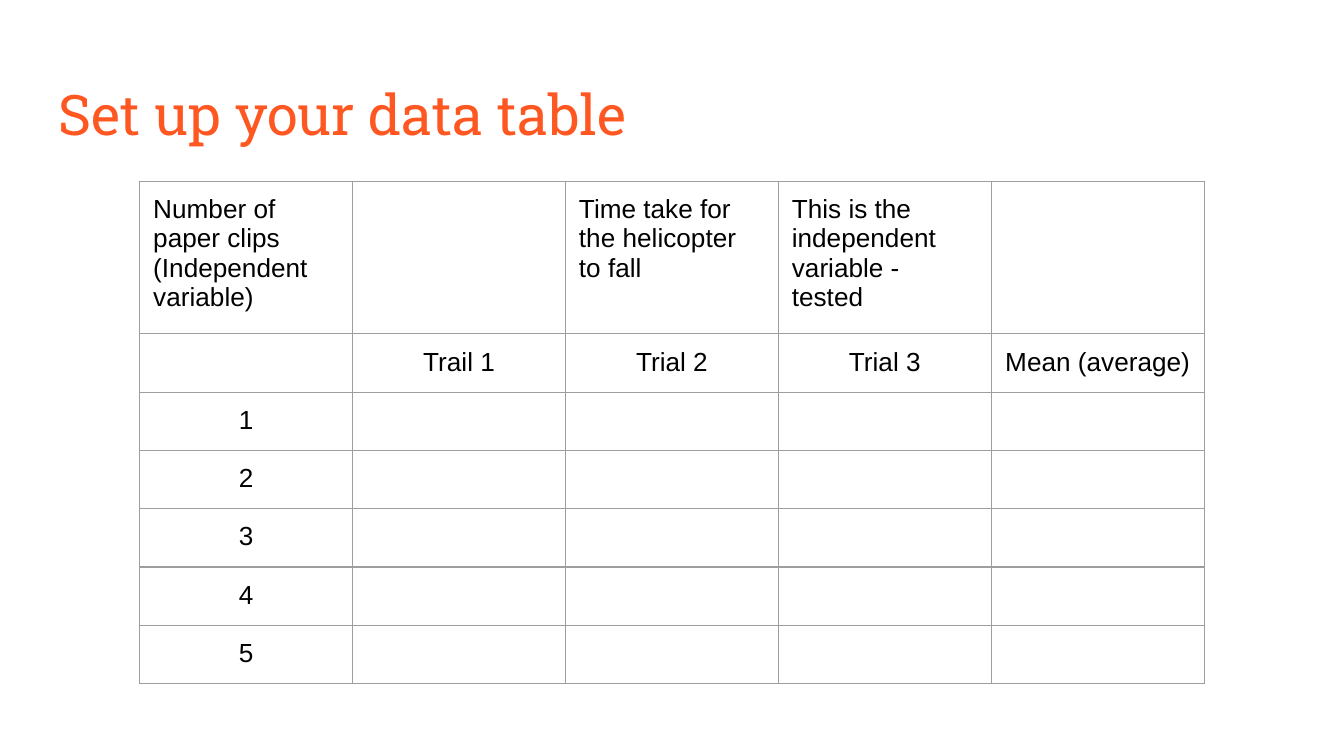
from dataclasses import dataclass

from pptx import Presentation
from pptx.dml.color import RGBColor as Rgb
from pptx.enum.text import MSO_ANCHOR as Anchor, PP_ALIGN as Align
from pptx.oxml.ns import qn
from pptx.slide import Slide
from pptx.table import Table, _Cell as Cell
from pptx.text.text import TextFrame as Frame
from pptx.util import Inches, Pt
from lxml.etree import SubElement as Sub

ORANGE = Rgb(0xFF, 0x57, 0x22)
BLACK = Rgb(0, 0, 0)
GREY = Rgb(0x9E, 0x9E, 0x9E)
WHITE = Rgb(0xFF, 0xFF, 0xFF)
PAD = Inches(0.1)


@dataclass(frozen=True)
class Style:
    font: str
    size: int
    color: Rgb


@dataclass(frozen=True)
class Entry:
    lines: tuple[str, ...] = ("",)
    align: Align = Align.LEFT


TITLE = Style("Roboto Slab", 30, ORANGE)
BODY = Style("Arial", 14, BLACK)
BLANK = Entry()
HEAD = [
    Entry(("Number of", "paper clips", "(Independent variable)")),
    BLANK,
    Entry(("Time take for the helicopter to fall",)),
    Entry(("This is the independent variable - tested",)),
    BLANK,
]
TRIALS = [BLANK] + [
    Entry((name,), Align.CENTER)
    for name in ("Trail 1", "Trial 2", "Trial 3", "Mean (average)")
]
COUNTS = [[Entry((str(n),), Align.CENTER)] + [BLANK] * 4 for n in range(1, 6)]
ROWS = [HEAD, TRIALS, *COUNTS]


def write(frame: Frame, entry: Entry, style: Style) -> None:
    frame.word_wrap = True
    for i, line in enumerate(entry.lines):
        para = frame.add_paragraph() if i else frame.paragraphs[0]
        para.alignment = entry.align
        if line:
            run = para.add_run()
            run.text = line
            run.font.name = style.font
            run.font.size = Pt(style.size)
            run.font.color.rgb = style.color
        else:
            end = Sub(para._p, qn("a:endParaRPr"), sz=str(style.size * 100))
            Sub(end, qn("a:latin"), typeface=style.font)


def pad(box: Frame | Cell) -> None:
    box.margin_left = box.margin_right = PAD
    box.margin_top = box.margin_bottom = PAD


def border(cell: Cell) -> None:
    props = cell._tc.get_or_add_tcPr()
    for side in ("a:lnL", "a:lnR", "a:lnT", "a:lnB"):
        line = Sub(props, qn(side), w=str(Pt(0.75)))
        fill = Sub(line, qn("a:solidFill"))
        Sub(fill, qn("a:srgbClr"), val=str(GREY))


def add_title(slide: Slide, text: str) -> None:
    box = slide.shapes.add_textbox(
        Inches(0.34), Inches(0.49), Inches(9.32), Inches(0.63)
    )
    frame = box.text_frame
    frame.vertical_anchor = Anchor.TOP
    pad(frame)
    write(frame, Entry((text,)), TITLE)


def add_grid(slide: Slide, rows: list[list[Entry]]) -> None:
    shape = slide.shapes.add_table(
        len(rows), len(rows[0]), Inches(1.04), Inches(1.35),
        Inches(7.92), Inches(0.42) * len(rows),
    )
    table: Table = shape.table
    table.first_row = table.horz_banding = False
    for r, row in enumerate(rows):
        for c, entry in enumerate(row):
            cell = table.cell(r, c)
            pad(cell)
            border(cell)
            cell.fill.background()
            write(cell.text_frame, entry, BODY)


def main() -> None:
    deck = Presentation()
    deck.slide_width = Inches(10)
    deck.slide_height = deck.slide_width * 9 // 16
    slide = deck.slides.add_slide(deck.slide_layouts[6])
    slide.background.fill.solid()
    slide.background.fill.fore_color.rgb = WHITE
    add_title(slide, "Set up your data table")
    add_grid(slide, ROWS)
    deck.save("out.pptx")


if __name__ == "__main__":
    main()
